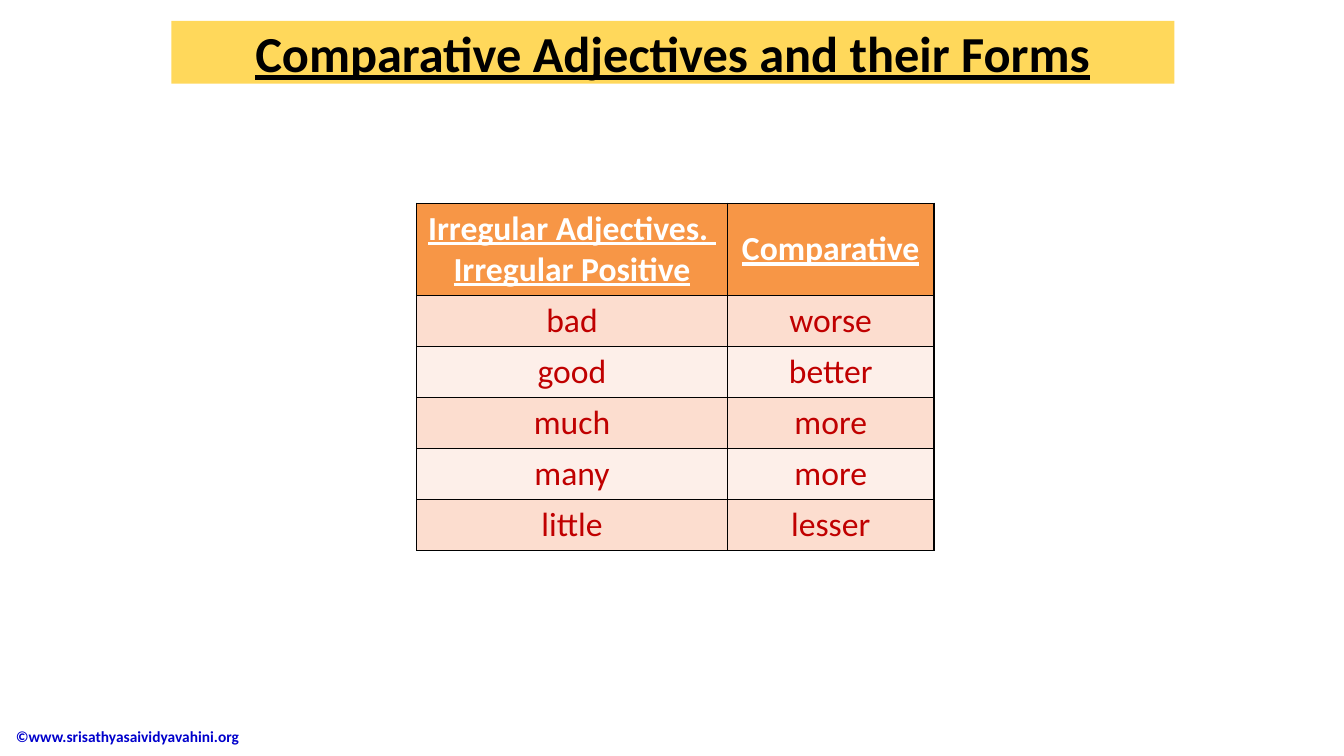
from dataclasses import dataclass

from lxml.etree import SubElement
from pptx import Presentation
from pptx.dml.color import RGBColor
from pptx.enum.text import MSO_ANCHOR as Anchor, MSO_AUTO_SIZE as AutoSize, PP_ALIGN as Align
from pptx.oxml.ns import qn
from pptx.util import Inches, Pt

W, H = Inches(13.33), Inches(7.5)
COLS, ROWS = 160, 90  # slide grid


@dataclass(frozen=True)
class Theme:
    font: str = "Calibri"
    ink: str = "000000"
    title_fill: str = "FFD85B"
    head_fill: str = "F79646"
    head_ink: str = "FFFFFF"
    bands: tuple[str, str] = ("FCDDCF", "FDEFE9")
    body_ink: str = "C00000"
    footer_ink: str = "0000CC"
    title_size: int = 36
    table_size: int = 24
    footer_size: int = 11
    border: float = 1


@dataclass(frozen=True)
class Box:
    col: float
    row: float
    cols: float
    rows: float

    def emu(self) -> tuple[int, int, int, int]:
        return across(self.col), down(self.row), across(self.cols), down(self.rows)


@dataclass(frozen=True)
class Adjective:
    positive: str
    comparative: str


T = Theme()
TITLE_BOX = Box(20.4, 2.5, 119.4, 7.45)
FOOTER_BOX = Box(0.7, 85.2, 42, 4.9)
TABLE_COL, TABLE_ROW = 49.6, 24.2
TABLE_COLS = (37, 24.6)
HEAD_ROWS, BODY_ROWS = 10.95, 6.08

HEADER = Adjective("Irregular Adjectives. \nIrregular Positive", "Comparative")
ADJECTIVES = [
    Adjective("bad", "worse"),
    Adjective("good", "better"),
    Adjective("much", "more"),
    Adjective("many", "more"),
    Adjective("little", "lesser"),
]


def across(cols: float) -> int:
    return round(W * cols / COLS)


def down(rows: float) -> int:
    return round(H * rows / ROWS)


def write(tf, text: str, *, size: int, color: str, bold: bool = False,
          underline: bool = False, align=Align.CENTER) -> None:
    for i, line in enumerate(text.split("\n")):
        p = tf.add_paragraph() if i else tf.paragraphs[0]
        p.alignment = align
        r = p.add_run()
        r.text = line
        r.font.name, r.font.size = T.font, Pt(size)
        r.font.bold, r.font.underline = bold, underline
        r.font.color.rgb = RGBColor.from_string(color)


def add_borders(cell) -> None:
    pr = cell._tc.get_or_add_tcPr()
    for i, side in enumerate(("lnL", "lnR", "lnT", "lnB")):
        ln = pr.makeelement(qn(f"a:{side}"), {"w": str(Pt(T.border))})
        fill = SubElement(ln, qn("a:solidFill"))
        SubElement(fill, qn("a:srgbClr"), val=T.ink)
        pr.insert(i, ln)


def fill_row(table, row: int, words: Adjective, fill: str, **fmt) -> None:
    for col, text in enumerate((words.positive, words.comparative)):
        cell = table.cell(row, col)
        cell.vertical_anchor = Anchor.MIDDLE
        cell.fill.solid()
        cell.fill.fore_color.rgb = RGBColor.from_string(fill)
        add_borders(cell)
        write(cell.text_frame, text, size=T.table_size, **fmt)


def add_title(s) -> None:
    sp = s.shapes.title
    sp.left, sp.top, sp.width, sp.height = TITLE_BOX.emu()
    sp.fill.solid()
    sp.fill.fore_color.rgb = RGBColor.from_string(T.title_fill)
    tf = sp.text_frame
    tf.auto_size, tf.vertical_anchor = AutoSize.NONE, Anchor.MIDDLE
    write(tf, "Comparative Adjectives and their Forms", size=T.title_size,
          color=T.ink, bold=True, underline=True)


def add_adjectives(s) -> None:
    heights = [HEAD_ROWS] + [BODY_ROWS] * len(ADJECTIVES)
    box = Box(TABLE_COL, TABLE_ROW, sum(TABLE_COLS), sum(heights))
    table = s.shapes.add_table(len(heights), len(TABLE_COLS), *box.emu()).table
    for column, cols in zip(table.columns, TABLE_COLS):
        column.width = across(cols)
    for row, rows in zip(table.rows, heights):
        row.height = down(rows)
    fill_row(table, 0, HEADER, T.head_fill, color=T.head_ink, bold=True, underline=True)
    for i, words in enumerate(ADJECTIVES):
        fill_row(table, i + 1, words, T.bands[i % 2], color=T.body_ink)


def add_footer(s) -> None:
    tf = s.shapes.add_textbox(*FOOTER_BOX.emu()).text_frame
    tf.word_wrap, tf.vertical_anchor = True, Anchor.MIDDLE
    write(tf, "©www.srisathyasaividyavahini.org", size=T.footer_size,
          color=T.footer_ink, bold=True, align=Align.LEFT)


def main() -> None:
    prs = Presentation()
    prs.slide_width, prs.slide_height = W, H
    s = prs.slides.add_slide(prs.slide_layouts[5])  # title only
    add_footer(s)
    add_adjectives(s)
    add_title(s)
    prs.save("out.pptx")


if __name__ == "__main__":
    main()
